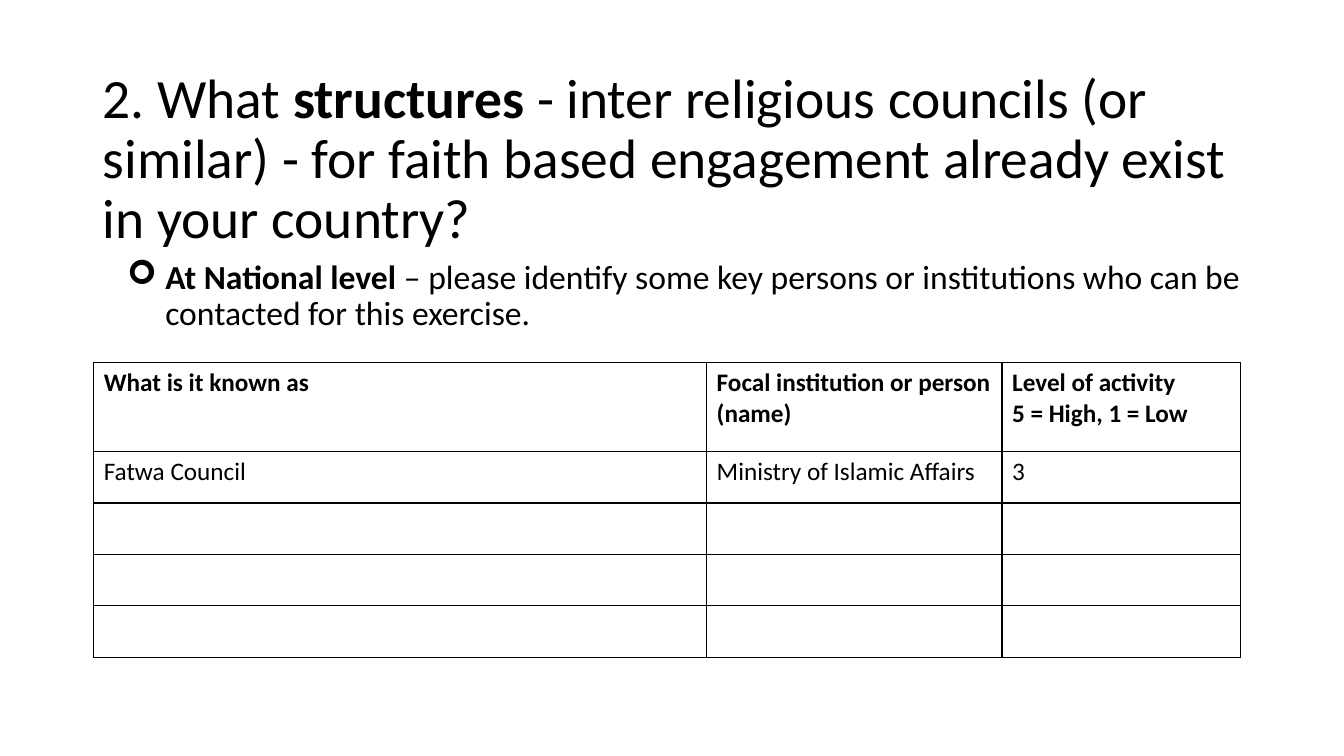
from dataclasses import dataclass

from lxml import etree
from pptx import Presentation
from pptx.dml.color import RGBColor
from pptx.enum.text import MSO_ANCHOR, MSO_AUTO_SIZE, PP_ALIGN
from pptx.oxml.ns import qn
from pptx.util import Emu, Inches, Pt

LEFT = PP_ALIGN.LEFT
TOP, MIDDLE = MSO_ANCHOR.TOP, MSO_ANCHOR.MIDDLE
NO_FIT = MSO_AUTO_SIZE.NONE

COLORS = {"text": "000000", "border": "000000"}
FONT = "Calibri"
SLIDE_W, SLIDE_H = Inches(13.33), Inches(7.5)


@dataclass(frozen=True)
class Run:
    text: str
    bold: bool = False


@dataclass(frozen=True)
class Box:
    left: float
    top: float
    width: float
    height: float


@dataclass(frozen=True)
class Block:
    index: int
    box: Box
    size: float
    runs: tuple[Run, ...]
    frame: dict
    paragraph: dict


TITLE = Block(
    0, Box(6.9, 11.6, 86.25, 19.33), 39.6,
    (Run("2. What "), Run("structures", True),
     Run(" - inter religious councils (or similar) - for faith based "
         "engagement already exist in your country?")),
    {"vertical_anchor": MIDDLE},
    {"alignment": LEFT, "line_spacing": 0.9},
)
BODY = Block(
    1, Box(6.9, 33.73, 86.25, 11.47), 24,
    (Run("At National level", True),
     Run(" – please identify some key persons or institutions "
         "who can be contacted for this exercise.")),
    {"vertical_anchor": TOP},
    {"alignment": LEFT, "line_spacing": 0.9, "space_before": Pt(5), "level": 1},
)
TABLE_LEFT, TABLE_TOP = 6.98, 48
COLUMNS = (45.6, 21.98, 17.77)
ROWS = (11.73,) + (6.8,) * 4
CELLS = (
    ("What is it known as", "Focal institution or person (name)",
     "Level of activity\n5 = High, 1 = Low"),
    ("Fatwa Council", "Ministry of Islamic Affairs", "3"),
)


def across(percent: float) -> Emu:
    return Emu(round(SLIDE_W * percent / 100))


def down(percent: float) -> Emu:
    return Emu(round(SLIDE_H * percent / 100))


def apply(target, values: dict) -> None:
    for name, value in values.items():
        setattr(target, name, value)


def add_run(p, run: Run, size: float) -> None:
    r = p.add_run()
    r.text = run.text
    apply(r.font, {"name": FONT, "size": Pt(size), "bold": run.bold})
    r.font.color.rgb = RGBColor.from_string(COLORS["text"])


def fill_placeholder(slide, block: Block):
    sp = slide.placeholders[block.index]
    box = block.box
    apply(sp, {"left": across(box.left), "top": down(box.top),
               "width": across(box.width), "height": down(box.height)})
    tf = sp.text_frame
    apply(tf, {"word_wrap": True, "auto_size": NO_FIT, **block.frame})
    p = tf.paragraphs[0]
    apply(p, block.paragraph)
    for run in block.runs:
        add_run(p, run, block.size)
    return p


def add_bullet(p, char: str, margin: float, indent: float) -> None:
    pPr = p._p.get_or_add_pPr()
    pPr.set("marL", str(Inches(margin)))
    pPr.set("indent", str(Inches(indent)))
    etree.SubElement(pPr, qn("a:buFont"), typeface="Wingdings")
    etree.SubElement(pPr, qn("a:buChar"), char=char)


def add_borders(cell) -> None:
    tcPr = cell._tc.get_or_add_tcPr()
    for i, side in enumerate(("lnL", "lnR", "lnT", "lnB")):
        ln = etree.Element(qn(f"a:{side}"), w=str(Pt(1)))
        fill = etree.SubElement(ln, qn("a:solidFill"))
        etree.SubElement(fill, qn("a:srgbClr"), val=COLORS["border"])
        tcPr.insert(i, ln)


def add_council_table(slide) -> None:
    frame = slide.shapes.add_table(
        len(ROWS), len(COLUMNS), across(TABLE_LEFT), down(TABLE_TOP),
        across(sum(COLUMNS)), down(sum(ROWS)))
    table = frame.table
    apply(table, {"first_row": False, "horz_banding": False})
    for column, width in zip(table.columns, COLUMNS):
        column.width = across(width)
    for row, height in zip(table.rows, ROWS):
        row.height = down(height)
    for cell in table.iter_cells():
        cell.fill.background()
        add_borders(cell)
    for i, texts in enumerate(CELLS):
        for j, text in enumerate(texts):
            tf = table.cell(i, j).text_frame
            for k, line in enumerate(text.split("\n")):
                p = tf.add_paragraph() if k else tf.paragraphs[0]
                add_run(p, Run(line, bold=i == 0), 18)


def main() -> None:
    prs = Presentation()
    apply(prs, {"slide_width": SLIDE_W, "slide_height": SLIDE_H})
    slide = prs.slides.add_slide(prs.slide_layouts[1])
    fill_placeholder(slide, TITLE)
    add_bullet(fill_placeholder(slide, BODY), "➢", 0.62, -0.38)
    add_council_table(slide)
    prs.save("out.pptx")


if __name__ == "__main__":
    main()
